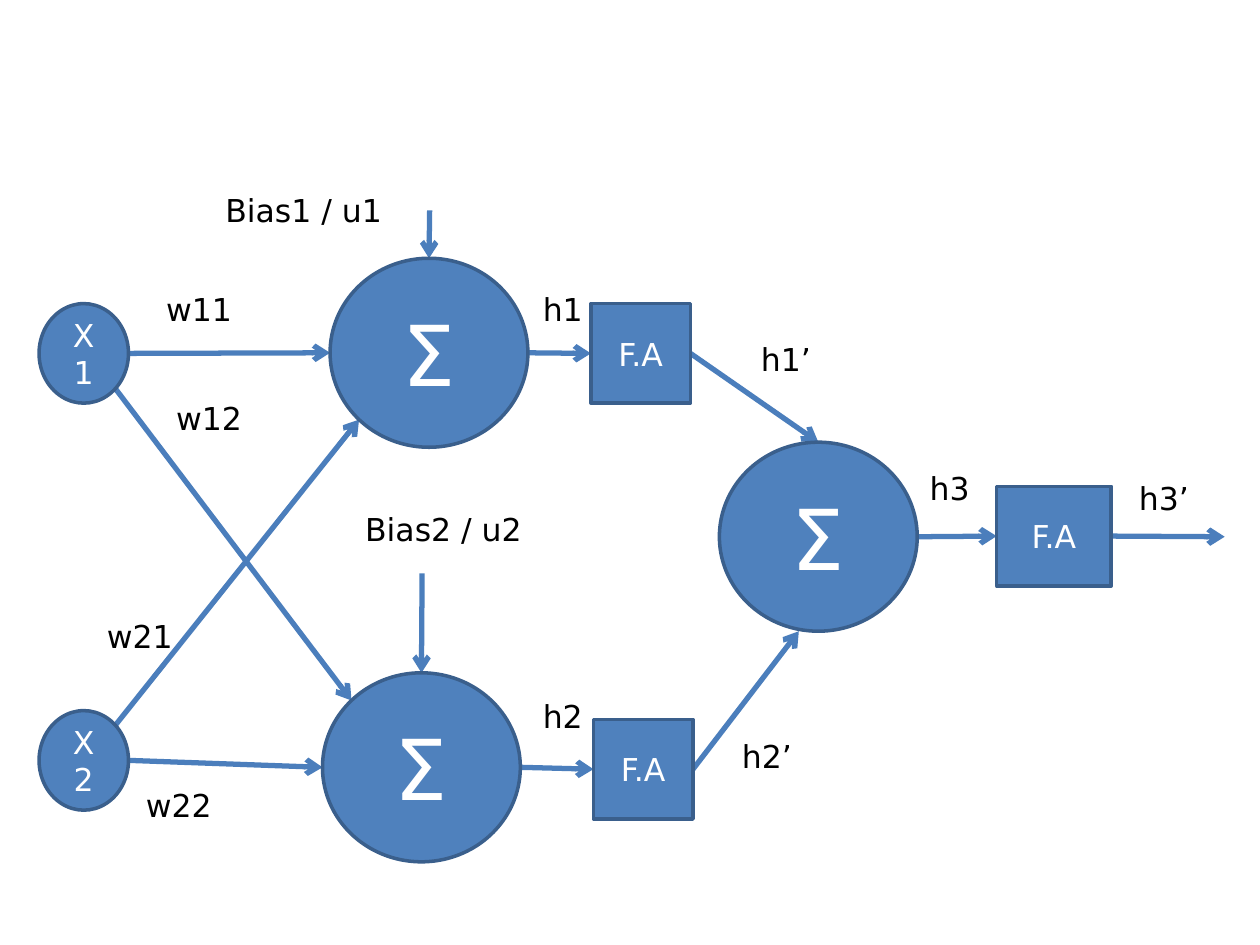
from math import hypot

from lxml import etree
from pptx import Presentation
from pptx.dml.color import RGBColor
from pptx.enum import shapes, text
from pptx.oxml import ns
from pptx.util import Inches, Pt

THEME = {
    "font": "DejaVu Sans",
    "fill": "4F81BD", "outline": "3A5F8C", "arrow": "4B7EBC",
    "on_fill": "FFFFFF", "ink": "000000",
    "body": 18, "symbol": 48,
    "outline_width": 2, "arrow_width": 3,
}

OVAL, BOX = shapes.MSO_SHAPE.OVAL, shapes.MSO_SHAPE.RECTANGLE

# kind: (preset, width, height, text size)
KINDS = {
    "input": (OVAL, 0.71, 0.79, THEME["body"]),
    "sum": (OVAL, 1.57, 1.5, THEME["symbol"]),
    "activation": (BOX, 0.79, 0.79, THEME["body"]),
    "output": (BOX, 0.91, 0.79, THEME["body"]),
}

# name: (kind, text, left, top)
NODES = {
    "sum1": ("sum", "Σ", 2.62, 2.05),
    "activation1": ("activation", "F.A", 4.69, 2.41),
    "sum2": ("sum", "Σ", 2.56, 5.34),
    "activation2": ("activation", "F.A", 4.71, 5.71),
    "sum3": ("sum", "Σ", 5.71, 3.51),
    "activation3": ("output", "F.A", 7.91, 3.86),
    "x1": ("input", "X1", 0.31, 2.41),
    "x2": ("input", "X2", 0.31, 5.64),
}

RIGHT, LEFT, TOP = (1, 0), (-1, 0), (0, -1)
TOP_LEFT, TOP_RIGHT = (-1, -1), (1, -1)
BOTTOM_LEFT, BOTTOM_RIGHT = (-1, 1), (1, 1)

# Each end is a (node, side) pair or a free (x, y) point.
ARROWS = [
    (("x1", RIGHT), ("sum1", LEFT)),
    (("x1", BOTTOM_RIGHT), ("sum2", TOP_LEFT)),
    (("x2", TOP_RIGHT), ("sum1", BOTTOM_LEFT)),
    (("x2", RIGHT), ("sum2", LEFT)),
    ((3.41, 1.67), ("sum1", TOP)),
    ((3.35, 4.55), ("sum2", TOP)),
    (("sum1", RIGHT), ("activation1", LEFT)),
    (("sum2", RIGHT), ("activation2", LEFT)),
    (("activation1", RIGHT), ("sum3", TOP)),
    (("activation2", RIGHT), (6.34, 5.01)),
    (("sum3", RIGHT), ("activation3", LEFT)),
    (("activation3", RIGHT), (9.72, 4.26)),
]

# (text, left, top, width)
LABELS = [
    ("Bias1 / u1", 1.69, 1.47, 1.57), ("Bias2 / u2", 2.8, 4, 1.57),
    ("w11", 1.22, 2.25, 1.18), ("w12", 1.3, 3.12, 1.18),
    ("w21", 0.75, 4.85, 1.18), ("w22", 1.06, 6.19, 1.18),
    ("h1", 4.21, 2.25, 0.63), ("h1’", 5.94, 2.65, 0.63),
    ("h2", 4.21, 5.48, 0.63), ("h2’", 5.79, 5.8, 0.63),
    ("h3", 7.28, 3.67, 0.63), ("h3’", 8.94, 3.75, 0.63),
]
LABEL_HEIGHT = 0.4


def color(name):
    return RGBColor.from_string(THEME[name])


def write(shape, content, *, size=THEME["body"], ink="ink",
          align=text.PP_ALIGN.LEFT, anchor=text.MSO_ANCHOR.TOP):
    frame = shape.text_frame
    frame.word_wrap = True
    frame.vertical_anchor = anchor
    paragraph = frame.paragraphs[0]
    paragraph.alignment = align
    run = paragraph.add_run()
    run.text = content
    run.font.name = THEME["font"]
    run.font.size = Pt(size)
    run.font.color.rgb = color(ink)


def add_node(slide, kind, content, left, top):
    preset, width, height, size = KINDS[kind]
    shape = slide.shapes.add_shape(
        preset, Inches(left), Inches(top), Inches(width), Inches(height))
    shape.shadow.inherit = False
    shape.fill.solid()
    shape.fill.fore_color.rgb = color("fill")
    shape.line.color.rgb = color("outline")
    shape.line.width = Pt(THEME["outline_width"])
    write(shape, content, size=size, ink="on_fill",
          align=text.PP_ALIGN.CENTER, anchor=text.MSO_ANCHOR.MIDDLE)


def locate(end):
    """Return the slide point of an arrow end, on the node's edge if it has one."""
    if end[0] not in NODES:
        return end
    name, (dx, dy) = end
    kind, _, left, top = NODES[name]
    _, width, height, _ = KINDS[kind]
    reach = 2 * hypot(dx, dy)
    return (left + width / 2 + dx * width / reach,
            top + height / 2 + dy * height / reach)


def add_arrow(slide, start, end):
    points = [Inches(value) for value in (*locate(start), *locate(end))]
    arrow = slide.shapes.add_connector(shapes.MSO_CONNECTOR.STRAIGHT, *points)
    arrow.line.color.rgb = color("arrow")
    arrow.line.width = Pt(THEME["arrow_width"])
    etree.SubElement(arrow.line._get_or_add_ln(), ns.qn("a:tailEnd"), type="arrow")
    etree.SubElement(arrow._element.spPr, ns.qn("a:effectLst"))


def main():
    presentation = Presentation()
    presentation.slide_width, presentation.slide_height = Inches(10), Inches(7.5)
    slide = presentation.slides.add_slide(presentation.slide_layouts[6])
    for start, end in ARROWS:
        add_arrow(slide, start, end)
    for node in NODES.values():
        add_node(slide, *node)
    for content, left, top, width in LABELS:
        label = slide.shapes.add_textbox(
            Inches(left), Inches(top), Inches(width), Inches(LABEL_HEIGHT))
        write(label, content)
    presentation.save("out.pptx")


if __name__ == "__main__":
    main()
